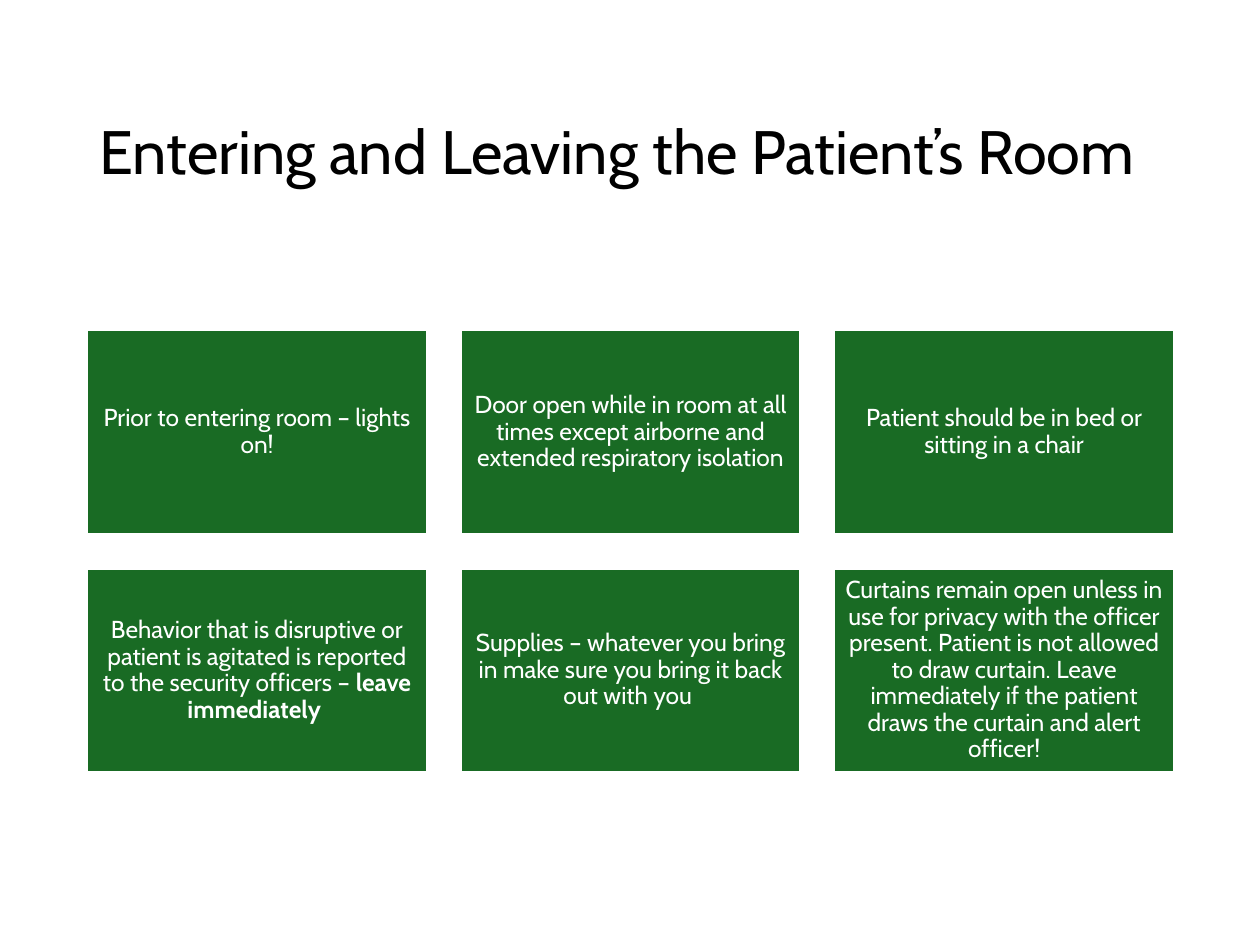
from pptx import Presentation
from pptx.dml.color import RGBColor
from pptx.enum.shapes import MSO_SHAPE
from pptx.enum.text import MSO_ANCHOR, PP_ALIGN
from pptx.util import Inches, Pt

FONT = "Cabin"
GREEN, WHITE, BLACK = "196B24", "FFFFFF", "000000"
LEFT, TOP, WIDTH, HEIGHT = 0.69, 2.62, 2.7, 1.62
STEP_X, STEP_Y, COLS = 2.965, 1.89, 3
RULES = [
    [("Prior to entering room – lights on!", False)],
    [("Door open while in room at all times except airborne and "
      "extended respiratory isolation", False)],
    [("Patient should be in bed or sitting in a chair", False)],
    [("Behavior that is disruptive or patient is agitated is reported "
      "to the security officers – ", False), ("leave immediately ", True)],
    [("Supplies – whatever you bring in make sure you bring it back "
      "out with you ", False)],
    [("Curtains remain open unless in use for privacy with the officer "
      "present. Patient is not allowed to draw curtain. Leave immediately "
      "if the patient draws the curtain and alert officer!", False)],
]


def color(code):
    """Turn a hex string into a colour."""
    return RGBColor.from_string(code)


def write(shape, runs, size, code, align, pads):
    """Fill a shape with one paragraph of styled runs."""
    frame = shape.text_frame
    form = {"word_wrap": True, "vertical_anchor": MSO_ANCHOR.MIDDLE}
    form.update({f"margin_{side}": Inches(pad) for side, pad in pads.items()})
    for name, value in form.items():
        setattr(frame, name, value)
    para = frame.paragraphs[0]
    para.alignment, para.line_spacing = align, 0.9
    for text, bold in runs:
        run = para.add_run()
        run.text = text
        for name, value in {"name": FONT, "size": Pt(size), "bold": bold}.items():
            setattr(run.font, name, value)
        run.font.color.rgb = color(code)


def add_title(slide, text):
    """Add the slide title."""
    box = slide.shapes.add_textbox(
        Inches(LEFT), Inches(0.61), Inches(8.62), Inches(1.24))
    pads = {"left": 0.1, "right": 0.1, "top": 0.05, "bottom": 0.05}
    write(box, [(text, False)], 35, BLACK, PP_ALIGN.LEFT, pads)


def add_card(slide, index, runs):
    """Add one rule card at its place in the grid."""
    row, col = divmod(index, COLS)
    card = slide.shapes.add_shape(
        MSO_SHAPE.RECTANGLE,
        Inches(LEFT + col * STEP_X), Inches(TOP + row * STEP_Y),
        Inches(WIDTH), Inches(HEIGHT))
    card.shadow.inherit = False
    card.fill.solid()
    card.fill.fore_color.rgb = color(GREEN)
    card.line.color.rgb = color(WHITE)
    card.line.width = Pt(1.5)
    pads = dict.fromkeys(("left", "right", "top", "bottom"), 0.06)
    write(card, runs, 14, WHITE, PP_ALIGN.CENTER, pads)


def main():
    """Build and save the slide."""
    deck = Presentation()
    deck.slide_width, deck.slide_height = Inches(10), Inches(7.5)
    slide = deck.slides.add_slide(deck.slide_layouts[6])
    add_title(slide, "Entering and Leaving the Patient’s Room")
    for index, runs in enumerate(RULES):
        add_card(slide, index, runs)
    deck.save("out.pptx")


if __name__ == "__main__":
    main()
